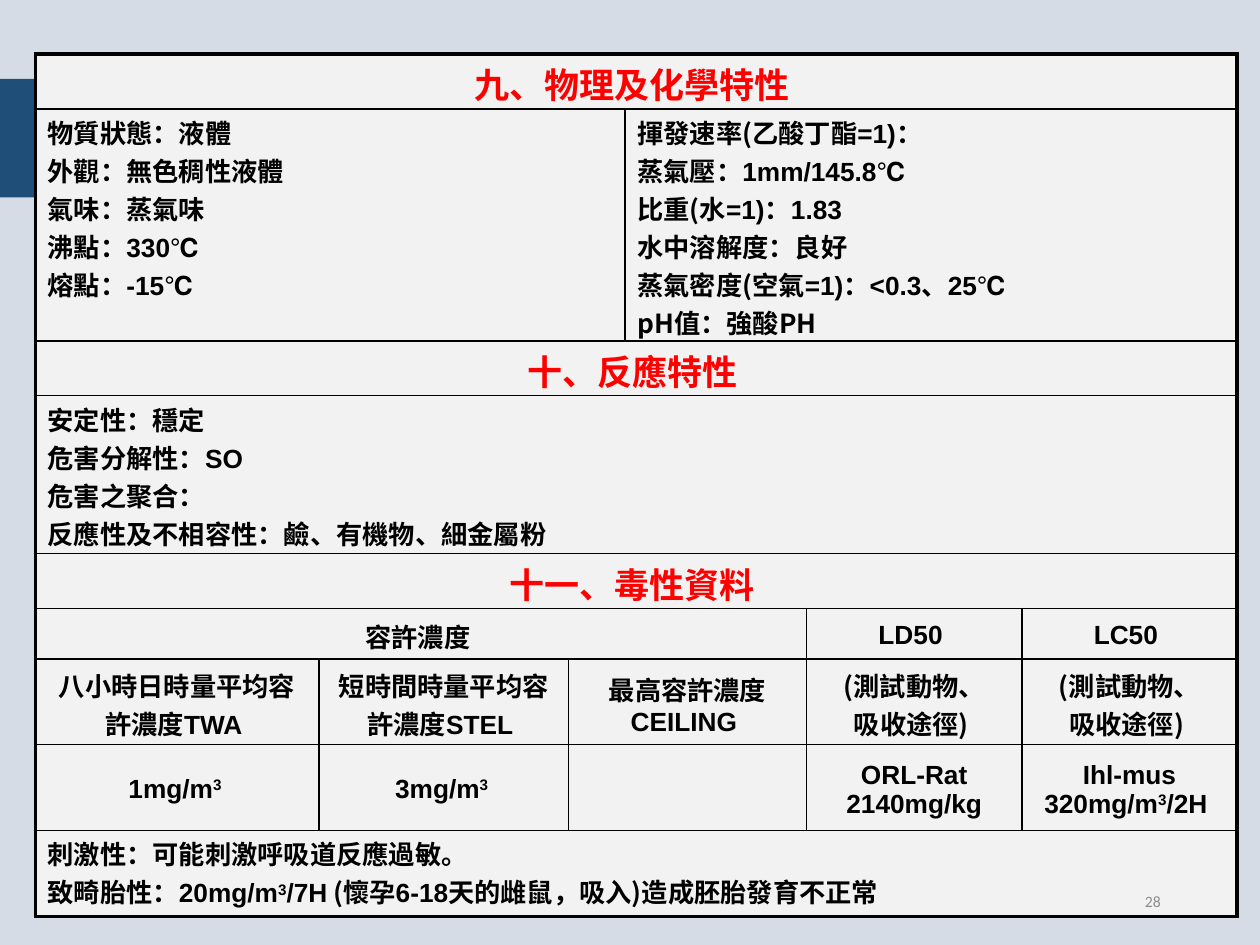
import pptx
import pptx.util
import pptx.dml.color
import pptx.enum.shapes
import pptx.enum.text
import pptx.oxml.ns
from lxml import etree

Cm, Pt = pptx.util.Cm, pptx.util.Pt
ALIGN = pptx.enum.text.PP_ALIGN
ANCHOR = pptx.enum.text.MSO_ANCHOR
COLORS = {"back": "D6DCE5", "band": "1F4E79", "cell": "F2F2F2", "line": "000000",
          "text": "000000", "heading": "FF0000", "number": "8C8C8C"}
CJK, LATIN = "Noto Sans CJK SC", "Arial"
COLS = [5.72, 5.03, 1.14, 3.66, 4.34, 4.34]
ROWS = [1.09, 4.65, 1.09, 3.18, 1.09, 1.02, 1.73, 1.73, 1.73]
STYLES = {
    "heading": {"size": 20, "color": "heading", "align": ALIGN.CENTER, "anchor": ANCHOR.TOP},
    "body": {"size": 15, "color": "text", "align": ALIGN.LEFT, "anchor": ANCHOR.TOP},
    "center": {"size": 15, "color": "text", "align": ALIGN.CENTER, "anchor": ANCHOR.MIDDLE},
}
CONTENT = [
    ("heading", [(6, "九、物理及化學特性 ")]),
    ("body", [
        (3, "物質狀態：液體\n外觀：無色稠性液體\n氣味：蒸氣味\n沸點：|330℃\n熔點：|-15℃"),
        (3, "揮發速率(乙酸丁酯|=1)：\n蒸氣壓：|1mm/145.8℃\n比重(水|=1)：1.83\n"
            "水中溶解度：良好\n蒸氣密度(空氣|=1)：<0.3、25℃\npH值：強酸PH")]),
    ("heading", [(6, "十、反應特性 ")]),
    ("body", [(6, "安定性：穩定\n危害分解性：|SO\n危害之聚合：\n反應性及不相容性：鹼、有機物、細金屬粉")]),
    ("heading", [(6, "十一、毒性資料 ")]),
    ("center", [(4, "容許濃度 "), (1, "|LD50 "), (1, "|LC50 ")]),
    ("center", [(1, "八小時日時量平均容許濃度|TWA "), (1, "短時間時量平均容許濃度|STEL "),
                (2, "最高容許濃度|CEILING "),
                (1, "(測試動物、\n吸收途徑) "), (1, "(測試動物、\n吸收途徑) ")]),
    ("center", [(1, "|1mg/m^3 "), (1, "|3mg/m^3 "), (2, ""),
                (1, "|ORL-Rat\n|2140mg/kg"), (1, "|Ihl-mus\n|320mg/m^3^/2H ")]),
    ("body", [(6, "刺激性：可能刺激呼吸道反應過敏。\n"
                  "致畸胎性：|20mg/m^3^/7H| (懷孕|6-18|天的雌鼠，吸入)造成胚胎發育不正常")]),
]


def rgb(name):
    """Return a palette colour."""
    return pptx.dml.color.RGBColor.from_string(COLORS[name])


def add_rect(s, box, color):
    """Add a plain filled rectangle."""
    sp = s.shapes.add_shape(pptx.enum.shapes.MSO_SHAPE.RECTANGLE, *map(Cm, box))
    sp.shadow.inherit = False
    sp.fill.solid()
    sp.fill.fore_color.rgb = rgb(color)
    sp.line.fill.background()


def add_run(p, text, font, size, color, bold=True, superscript=False):
    """Add one formatted run."""
    r = p.add_run()
    r.text = text
    for key, value in {"name": font, "size": Pt(size), "bold": bold}.items():
        setattr(r.font, key, value)
    r.font.color.rgb = rgb(color)
    rPr = r.font._element
    etree.SubElement(rPr, pptx.oxml.ns.qn("a:ea"), typeface=CJK)
    if superscript:
        rPr.set("baseline", "30000")


def fill_text(tf, text, style):
    """Write lines where | switches the font and ^ toggles superscript."""
    for i, line in enumerate(text.split("\n")):
        p = tf.paragraphs[0] if i == 0 else tf.add_paragraph()
        p.alignment = style["align"]
        for j, part in enumerate(line.split("|")):
            for k, piece in enumerate(part.split("^")):
                if piece:
                    add_run(p, piece, (CJK, LATIN)[j % 2], style["size"], style["color"],
                            superscript=k % 2 == 1)


def set_borders(cell, widths):
    """Draw the given sides, in points, of a cell."""
    tcPr = cell._tc.get_or_add_tcPr()
    for side in "LRTB":
        if side in widths:
            ln = etree.SubElement(tcPr, pptx.oxml.ns.qn("a:ln" + side), w=str(Pt(widths[side])))
            fill = etree.SubElement(ln, pptx.oxml.ns.qn("a:solidFill"))
            etree.SubElement(fill, pptx.oxml.ns.qn("a:srgbClr"), val=COLORS["line"])


def format_span(table, row, first, last):
    """Merge a run of cells and give it borders and fill."""
    widths = {"L": 2.25 if first == 0 else 1, "R": 2.25 if last == len(COLS) - 1 else 1,
              "T": 2.25 if row == 0 else 1, "B": 2.25 if row == len(ROWS) - 1 else 1}
    origin = table.cell(row, first)
    if last > first:
        origin.merge(table.cell(row, last))
    for c in range(first, last + 1):
        sides = "LRTB" if c == first else "RTB" if c == last else "TB"
        cell = table.cell(row, c)
        set_borders(cell, {side: widths[side] for side in sides})
        cell.fill.solid()
        cell.fill.fore_color.rgb = rgb("cell")
    return origin


def add_data_table(s):
    """Build the safety data table."""
    table = s.shapes.add_table(len(ROWS), len(COLS), Cm(0.71), Cm(1.09),
                               Cm(sum(COLS)), Cm(sum(ROWS))).table
    table.first_row = table.horz_banding = False
    for column, width in zip(table.columns, COLS):
        column.width = Cm(width)
    for i, (name, cells) in enumerate(CONTENT):
        table.rows[i].height = Cm(ROWS[i])
        first = 0
        for span, text in cells:
            cell = format_span(table, i, first, first + span - 1)
            formats = {"margin_left": Cm(0.25), "margin_right": Cm(0.25), "margin_top": Cm(0.08),
                       "margin_bottom": 0, "vertical_anchor": STYLES[name]["anchor"]}
            for key, value in formats.items():
                setattr(cell, key, value)
            fill_text(cell.text_frame, text, STYLES[name])
            first += span


def add_number(s, text):
    """Add the page number."""
    tf = s.shapes.add_textbox(Cm(17.93), Cm(17.65), Cm(5.72), Cm(1.02)).text_frame
    tf.word_wrap = True
    tf.vertical_anchor = ANCHOR.MIDDLE
    p = tf.paragraphs[0]
    p.alignment = ALIGN.RIGHT
    add_run(p, text, "Calibri", 9, "number", bold=False)


def main():
    """Build and save the slide."""
    prs = pptx.Presentation()
    prs.slide_width, prs.slide_height = Cm(25.4), Cm(19.05)
    s = prs.slides.add_slide(prs.slide_layouts[6])
    add_rect(s, (0, 0, 25.4, 19.05), "back")
    add_rect(s, (0, 1.59, 17.3, 2.39), "band")
    add_data_table(s)
    add_number(s, "28")
    prs.save("out.pptx")


if __name__ == "__main__":
    main()
